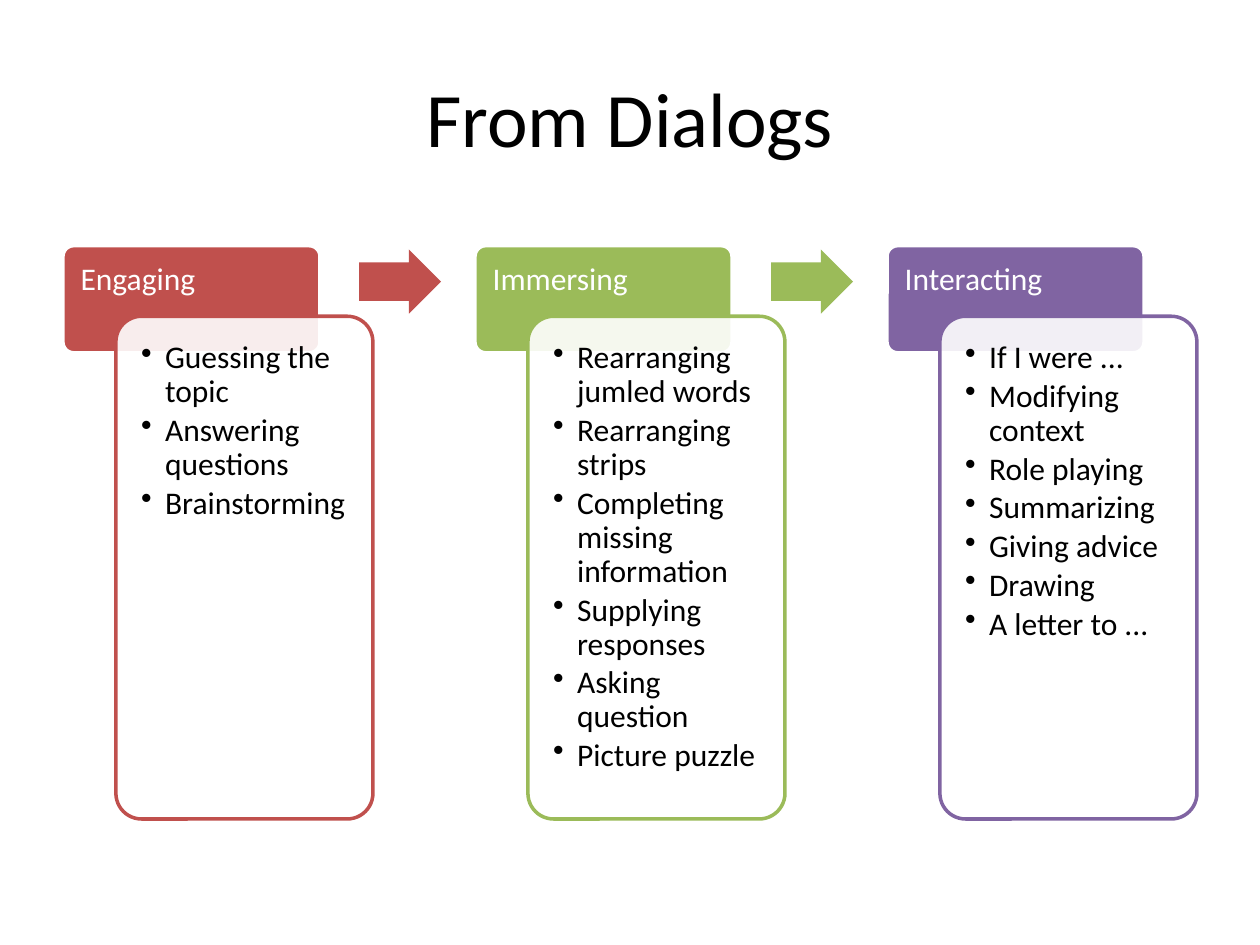
from lxml.etree import SubElement
from pptx import Presentation
from pptx.dml.color import RGBColor
from pptx.enum.shapes import MSO_SHAPE
from pptx.enum.text import MSO_ANCHOR, PP_ALIGN
from pptx.oxml.ns import qn
from pptx.util import Inches, Pt

STAGES = [
    ("Engaging", "C0504D",
     ["Guessing the topic", "Answering questions", "Brainstorming"]),
    ("Immersing", "9BBB59",
     ["Rearranging jumled words", "Rearranging strips",
      "Completing missing information", "Supplying responses",
      "Asking question", "Picture puzzle"]),
    ("Interacting", "8064A2",
     ["If I were ...", "Modifying context", "Role playing", "Summarizing",
      "Giving advice", "Drawing", "A letter to ..."]),
]
STAGE_LEFT, STAGE_STEP = 0.5, 3.27
FONT = "Calibri"


def set_all(target, values):
    """Set every attribute in the dict on the target."""
    for name, value in values.items():
        setattr(target, name, value)


def color(hex_string):
    """Turn a hex string into a colour."""
    return RGBColor.from_string(hex_string)


def add_filled_shape(slide, kind, box, adjustments, fill, line=None, opacity=None):
    """Add a preset shape with a solid fill and an optional outline."""
    shape = slide.shapes.add_shape(kind, *map(Inches, box))
    shape.shadow.inherit = False
    for index, value in enumerate(adjustments):
        shape.adjustments[index] = value
    shape.fill.solid()
    shape.fill.fore_color.rgb = color(fill)
    if opacity is not None:
        fill_color = shape.fill._xPr.find(qn("a:solidFill"))[0]
        SubElement(fill_color, qn("a:alpha"), val=str(opacity * 1000))
    if line:
        shape.line.color.rgb = color(line)
        shape.line.width = Pt(2)
    else:
        shape.line.fill.background()


def add_bullet(paragraph):
    """Give the paragraph a round bullet with a hanging indent."""
    properties = paragraph._p.get_or_add_pPr()
    properties.set("marL", str(Inches(0.19)))
    properties.set("indent", str(-Inches(0.19)))
    SubElement(properties, qn("a:buChar"), char="•")


def add_text(slide, box, lines, size, hex_color, frame_format, paragraph_format,
             bulleted=False):
    """Add a wrapped text box with one paragraph per line."""
    frame = slide.shapes.add_textbox(*map(Inches, box)).text_frame
    set_all(frame, {"word_wrap": True, **frame_format})
    for index, line in enumerate(lines):
        paragraph = frame.add_paragraph() if index else frame.paragraphs[0]
        set_all(paragraph, paragraph_format)
        if bulleted:
            add_bullet(paragraph)
        run = paragraph.add_run()
        run.text = line
        set_all(run.font, {"name": FONT, "size": Pt(size)})
        run.font.color.rgb = color(hex_color)


def add_stage(slide, left, heading, hex_color, items):
    """Add a heading block with its overlapping card of bullets."""
    margin = Inches(0.14)
    margins = {"margin_left": margin, "margin_top": margin, "margin_right": margin}
    add_filled_shape(slide, MSO_SHAPE.ROUNDED_RECTANGLE, (left, 1.95, 2.04, 0.85),
                     [0.1], hex_color, "FFFFFF")
    add_text(slide, (left, 1.95, 2.04, 0.57), [heading], 18, "FFFFFF",
             {**margins, "margin_bottom": Inches(0.07)}, {"line_spacing": 0.9})
    add_filled_shape(slide, MSO_SHAPE.ROUNDED_RECTANGLE,
                     (left + 0.42, 2.51, 2.04, 3.99), [0.1], "FFFFFF", hex_color, 90)
    add_text(slide, (left + 0.48, 2.57, 1.92, 3.87), items, 18, "000000",
             {**margins, "margin_bottom": margin},
             {"line_spacing": 0.9, "space_after": Pt(2.7)}, bulleted=True)


def add_stage_arrow(slide, left, hex_color):
    """Add the arrow that leads from a stage to the next one."""
    add_filled_shape(slide, MSO_SHAPE.RIGHT_ARROW, (left + 2.35, 1.98, 0.65, 0.51),
                     [0.6, 0.5], hex_color)


def main():
    """Build the slide and save it."""
    presentation = Presentation()
    set_all(presentation, {"slide_width": Inches(10), "slide_height": Inches(7.5)})
    slide = presentation.slides.add_slide(presentation.slide_layouts[6])
    add_text(slide, (0.5, 0.3, 9, 1.25), ["From Dialogs"], 44, "000000",
             {"vertical_anchor": MSO_ANCHOR.MIDDLE}, {"alignment": PP_ALIGN.CENTER})
    for index, (heading, hex_color, items) in enumerate(STAGES):
        left = STAGE_LEFT + index * STAGE_STEP
        add_stage(slide, left, heading, hex_color, items)
        if index < len(STAGES) - 1:
            add_stage_arrow(slide, left, hex_color)
    presentation.save("out.pptx")


if __name__ == "__main__":
    main()
